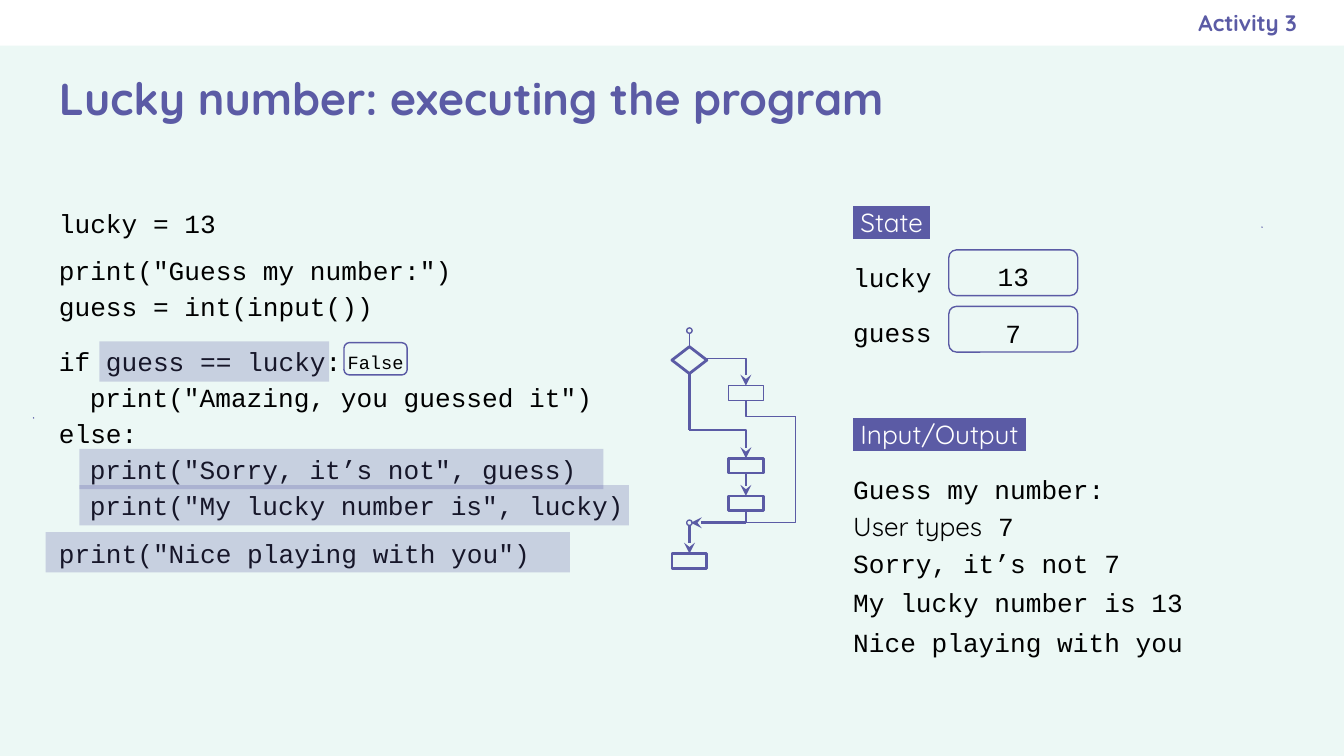
from dataclasses import dataclass
from typing import Optional

from lxml.etree import SubElement
from pptx import Presentation
from pptx.dml.color import RGBColor
from pptx.enum.shapes import MSO_CONNECTOR, MSO_SHAPE
from pptx.enum.text import MSO_ANCHOR, PP_ALIGN
from pptx.oxml.ns import qn
from pptx.util import Inches, Pt


@dataclass(frozen=True)
class Theme:
    accent: str = "5B5BA5"
    ground: str = "ECF8F5"
    white: str = "FFFFFF"
    ink: str = "000000"
    code: str = "Courier New"
    prose: str = "Quicksand"
    title: int = 24
    body: int = 14
    tag: int = 12
    small: int = 10
    thin: float = 0.75
    thick: float = 1.5


THEME = Theme()


@dataclass(frozen=True)
class Box:
    left: float
    top: float
    width: float
    height: float

    def inches(self) -> list:
        return [Inches(v) for v in (self.left, self.top, self.width, self.height)]


@dataclass(frozen=True)
class Run:
    text: str
    size: int = THEME.body
    font: str = THEME.code
    color: str = THEME.ink
    bold: bool = False
    highlight: Optional[str] = None


@dataclass(frozen=True)
class Line:
    runs: tuple
    before: int = 0
    indent: float = 0
    spacing: float = 1.15
    align: PP_ALIGN = PP_ALIGN.LEFT


@dataclass(frozen=True)
class Flow:
    start: tuple
    end: tuple
    weight: float = THEME.thick
    arrow: bool = False


def apply(target, formats: dict) -> None:
    for name, value in formats.items():
        setattr(target, name, value)


def write(frame, lines: list, insets=(0.1, 0.1, 0.1, 0.1), anchor=MSO_ANCHOR.TOP) -> None:
    sides = ("margin_left", "margin_top", "margin_right", "margin_bottom")
    apply(frame, {"word_wrap": True, "vertical_anchor": anchor,
                  **{side: Inches(inset) for side, inset in zip(sides, insets)}})
    for number, line in enumerate(lines):
        paragraph = frame.add_paragraph() if number else frame.paragraphs[0]
        apply(paragraph, {"alignment": line.align, "line_spacing": line.spacing,
                          "space_before": Pt(line.before)})
        if line.indent:
            paragraph._p.get_or_add_pPr().set("marL", str(Inches(line.indent)))
        for part in line.runs:
            run = paragraph.add_run()
            run.text = part.text
            run.font.color.rgb = RGBColor.from_string(part.color)
            apply(run.font, {"name": part.font, "size": Pt(part.size), "bold": part.bold})
            if part.highlight:
                properties = run.font._element
                highlight = SubElement(properties, qn("a:highlight"))
                SubElement(highlight, qn("a:srgbClr"), val=part.highlight)
                properties.find(qn("a:latin")).addprevious(highlight)


def add_text(slide, box: Box, lines: list, **layout) -> None:
    write(slide.shapes.add_textbox(*box.inches()).text_frame, lines, **layout)


def add_figure(slide, kind, box: Box, fill: Optional[str] = None,
               weight: float = 0, alpha: Optional[int] = None):
    figure = slide.shapes.add_shape(kind, *box.inches())
    figure.shadow.inherit = False
    if fill:
        figure.fill.solid()
        figure.fill.fore_color.rgb = RGBColor.from_string(fill)
        if alpha:
            color = figure.element.spPr.find(qn("a:solidFill"))[0]
            SubElement(color, qn("a:alpha"), val=str(alpha * 1000))
    else:
        figure.fill.background()
    if weight:
        figure.line.color.rgb = RGBColor.from_string(THEME.accent)
        figure.line.width = Pt(weight)
    else:
        figure.line.fill.background()
    return figure


def add_value(slide, box: Box, value: str, size: int = THEME.body, side: float = 0.1) -> None:
    figure = add_figure(slide, MSO_SHAPE.ROUNDED_RECTANGLE, box, weight=THEME.thin)
    write(figure.text_frame, [Line((Run(value, size),), align=PP_ALIGN.CENTER)],
          insets=(side, 0.02, side, 0), anchor=MSO_ANCHOR.MIDDLE)


def add_flow(slide, flow: Flow) -> None:
    bent = flow.start[0] != flow.end[0] and flow.start[1] != flow.end[1]
    kind = MSO_CONNECTOR.ELBOW if bent else MSO_CONNECTOR.STRAIGHT
    connector = slide.shapes.add_connector(kind, *(Inches(v) for v in flow.start + flow.end))
    connector.line.color.rgb = RGBColor.from_string(THEME.accent)
    connector.line.width = Pt(flow.weight)
    properties = connector.element.spPr
    if bent:
        properties.find(qn("a:prstGeom")).set("prst", "bentConnector2")
    if flow.arrow:
        SubElement(properties.find(qn("a:ln")), qn("a:tailEnd"), type="stealth")
    SubElement(properties, qn("a:effectLst"))


def add_flowchart(slide) -> None:
    main, branch, outer = 5.13, 5.55, 5.92
    thin = THEME.thin
    for flow in (
        Flow((main, 2.48), (main, 2.58), thin),
        Flow((5.25, 2.67), (branch, 2.87), thin, True),
        Flow((outer, 3.1), (branch, 2.98), thin),
        Flow((branch, 3.89), (outer, 3.1), thin),
        Flow((main, 2.77), (main, 3.2)),
        Flow((main, 3.2), (branch, 3.41), arrow=True),
        Flow((branch, 3.52), (branch, 3.69), arrow=True),
        Flow((branch, 3.79), (branch, 3.89)),
        Flow((branch, 3.89), (5.14, 3.89), arrow=True),
        Flow((main, 3.91), (main, 4.12), arrow=True),
    ):
        add_flow(slide, flow)
    for left, top, weight in ((5.42, 2.87, thin), (5.42, 3.41, THEME.thick),
                              (5.42, 3.69, THEME.thick), (5, 4.12, THEME.thick)):
        add_figure(slide, MSO_SHAPE.RECTANGLE, Box(left, top, 0.26, 0.11), weight=weight)
    add_figure(slide, MSO_SHAPE.FLOWCHART_DECISION, Box(5, 2.58, 0.26, 0.2), weight=THEME.thick)
    for top in (2.44, 3.87):
        add_figure(slide, MSO_SHAPE.OVAL, Box(5.11, top, 0.04, 0.04), weight=thin)


def main() -> None:
    deck = Presentation()
    deck.slide_width = Inches(10)
    deck.slide_height = deck.slide_width * 9 // 16
    slide = deck.slides.add_slide(deck.slide_layouts[6])
    slide.background.fill.solid()
    slide.background.fill.fore_color.rgb = RGBColor.from_string(THEME.ground)

    add_figure(slide, MSO_SHAPE.RECTANGLE, Box(0, 0, 10, 0.34), THEME.white)
    activity = Run("Activity 3", THEME.tag, THEME.prose, THEME.accent, True)
    add_text(slide, Box(5.75, 0, 3.9, 0.34), [Line((activity,), spacing=1.0, align=PP_ALIGN.RIGHT)],
             insets=(0.1, 0.1, 0, 0.1), anchor=MSO_ANCHOR.MIDDLE)
    title = Run("Lucky number: executing the program", THEME.title, THEME.prose, THEME.accent, True)
    add_text(slide, Box(0.34, 0.34, 9.32, 0.77), [Line((title,), spacing=1.0)],
             anchor=MSO_ANCHOR.MIDDLE)

    program = (
        ("lucky = 13", 0, 0),
        ('print("Guess my number:")', 6, 0),
        ("guess = int(input())", 0, 0),
        ("if guess == lucky:", 10, 0),
        ('print("Amazing, you guessed it")', 0, 0.23),
        ("else:", 0, 0),
        ('print("Sorry, it’s not", guess)', 0, 0.23),
        ('print("My lucky number is", lucky)', 0, 0.23),
        ('print("Nice playing with you")', 6, 0),
    )
    add_text(slide, Box(0.34, 1.41, 4.84, 2.93),
             [Line((Run(code),), before, indent) for code, before, indent in program])
    for left, top, width in ((0.74, 2.54, 1.71), (0.59, 3.34, 3.9),
                             (0.59, 3.61, 4.09), (0.34, 3.96, 3.9)):
        add_figure(slide, MSO_SHAPE.RECTANGLE, Box(left, top, width, 0.3), THEME.accent, alpha=25)
    add_value(slide, Box(2.56, 2.55, 0.47, 0.24), "False", THEME.small, 0)

    add_flowchart(slide)

    for heading, top in ((" State ", 1.4), (" Input/Output ", 2.98)):
        label = Run(heading, font=THEME.prose, color=THEME.white, highlight=THEME.accent)
        add_text(slide, Box(6.25, top, 1.78, 0.4), [Line((label,), spacing=1.14)])
    for variable, value, top, value_top in (("lucky", "13", 1.81, 1.86), ("guess", "7", 2.22, 2.28)):
        add_text(slide, Box(6.25, top, 1.34, 0.4), [Line((Run(variable),))])
        add_value(slide, Box(7.06, value_top, 0.96, 0.34), value)
    for top, spacing, runs in (
        (3.39, 1.14, (Run("Guess my number:"),)),
        (3.66, 1.15, (Run("User types", font=THEME.prose), Run(" 7"))),
        (3.94, 1.15, (Run("Sorry, it’s not 7"),)),
        (4.23, 1.15, (Run("My lucky number is 13"),)),
        (4.53, 1.15, (Run("Nice playing with you"),)),
    ):
        add_text(slide, Box(6.25, top, 3.41, 0.4), [Line(runs, spacing=spacing)])

    for left, top in ((9.39, 1.69), (0.25, 3.11)):
        add_figure(slide, MSO_SHAPE.OVAL, Box(left, top, 0, 0), THEME.accent, THEME.thin)
    deck.save("out.pptx")


if __name__ == "__main__":
    main()
